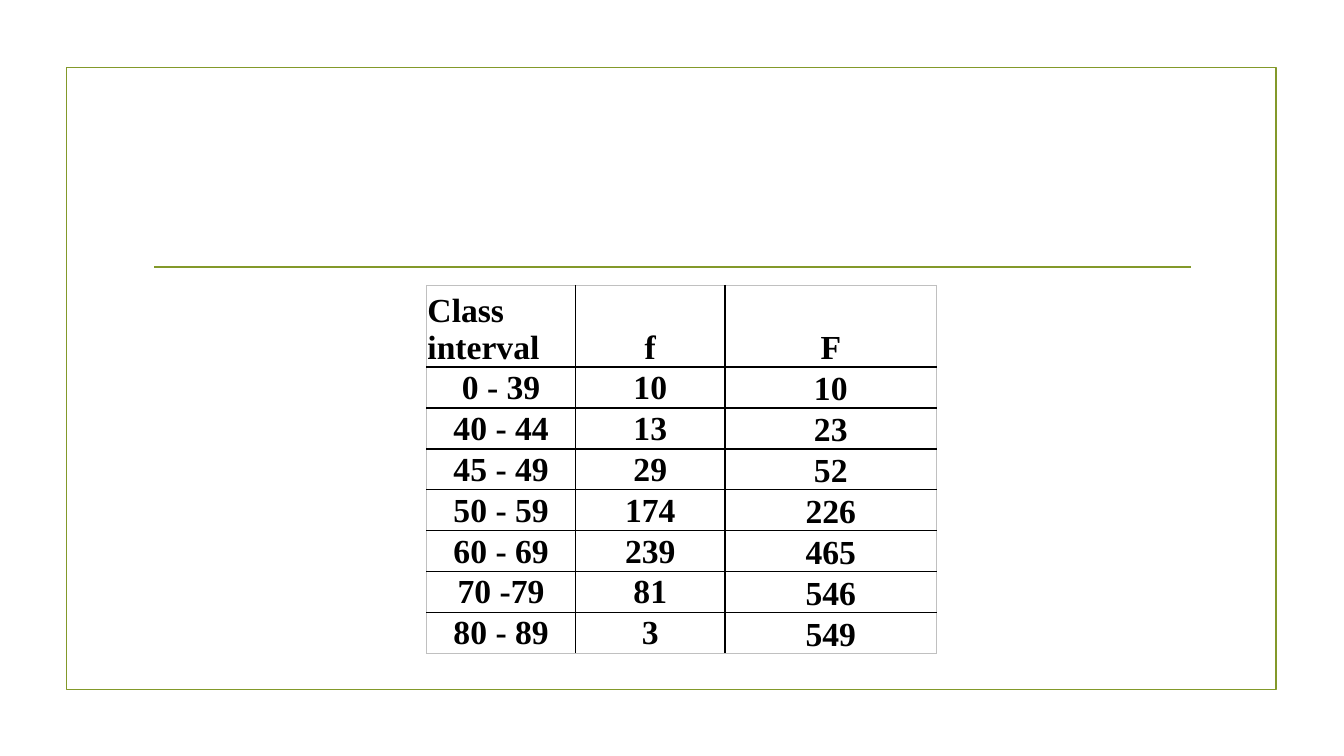
from lxml import etree
from pptx import Presentation
from pptx.dml.color import RGBColor
from pptx.enum.shapes import MSO_CONNECTOR, MSO_SHAPE
from pptx.enum.text import MSO_ANCHOR, PP_ALIGN
from pptx.oxml.ns import qn
from pptx.util import Inches, Pt

LEFT, MID = PP_ALIGN.LEFT, PP_ALIGN.CENTER
LOW, HALF = MSO_ANCHOR.BOTTOM, MSO_ANCHOR.MIDDLE
RECT, LINE = MSO_SHAPE.RECTANGLE, MSO_CONNECTOR.STRAIGHT
INK = {"olive": "83992A", "black": "000000", "grey": "C0C0C0"}


def write(cell, text, align=MID, anchor=HALF, size=24, ink="black"):
    cell.margin_left = cell.margin_right = cell.margin_top = Inches(0.01)
    cell.margin_bottom = 0
    cell.vertical_anchor = anchor
    para = cell.text_frame.paragraphs[0]
    para.alignment = align
    run = para.add_run()
    run.text = text
    run.font.name = "Times New Roman"
    run.font.size = Pt(size)
    run.font.bold = True
    run.font.color.rgb = RGBColor.from_string(INK[ink])


def edge(cell, side, outer):
    ln = etree.SubElement(cell._tc.get_or_add_tcPr(), qn("a:ln" + side))
    ln.set("w", str(Pt(0.5 if outer else 1)))
    fill = etree.SubElement(ln, qn("a:solidFill"))
    ink = INK["grey" if outer else "black"]
    etree.SubElement(fill, qn("a:srgbClr")).set("val", ink)


deck = Presentation()
deck.slide_width, deck.slide_height = Inches(13.33), Inches(7.5)
slide = deck.slides.add_slide(deck.slide_layouts[6])
shapes = slide.shapes

# Frame and title rule
frame = shapes.add_shape(RECT, Inches(0.66), Inches(0.67), Inches(12), Inches(6.17))
frame.shadow.inherit = False
frame.fill.background()
rule = shapes.add_connector(LINE, Inches(1.53), Inches(2.65), Inches(11.81), Inches(2.65))
etree.SubElement(rule._element.spPr, qn("a:effectLst"))
for item in (frame, rule):
    item.line.color.rgb = RGBColor.from_string(INK["olive"])
    item.line.width = Pt(1.25)

# Frequency table
rows = [
    ("Class interval", "f", "F"),
    ("0 - 39", "10", "10"),
    ("40 - 44", "13", "23"),
    ("45 - 49", "29", "52"),
    ("50 - 59", "174", "226"),
    ("60 - 69", "239", "465"),
    ("70 -79", "81", "546"),
    ("80 - 89", "3", "549"),
]
wide = (1.48, 1.48, 2.1)
tall = 0.406
end, last = len(rows) - 1, len(wide) - 1
table = shapes.add_table(len(rows), len(wide), Inches(4.23), Inches(2.83),
                         Inches(sum(wide)), Inches(tall * (len(rows) + 1))).table
table.first_row = table.horz_banding = False
for col, width in zip(table.columns, wide):
    col.width = Inches(width)

for r, row in enumerate(rows):
    table.rows[r].height = Inches(tall * (2 if r == 0 else 1))
    for c, text in enumerate(row):
        cell = table.cell(r, c)
        write(cell, text, align=LEFT if r == c == 0 else MID,
              anchor=LOW if r == 0 or c == last else HALF)
        for side, outer in (("L", c == 0), ("R", c == last), ("T", r == 0), ("B", r == end)):
            edge(cell, side, outer)
        cell.fill.background()

deck.save("out.pptx")
